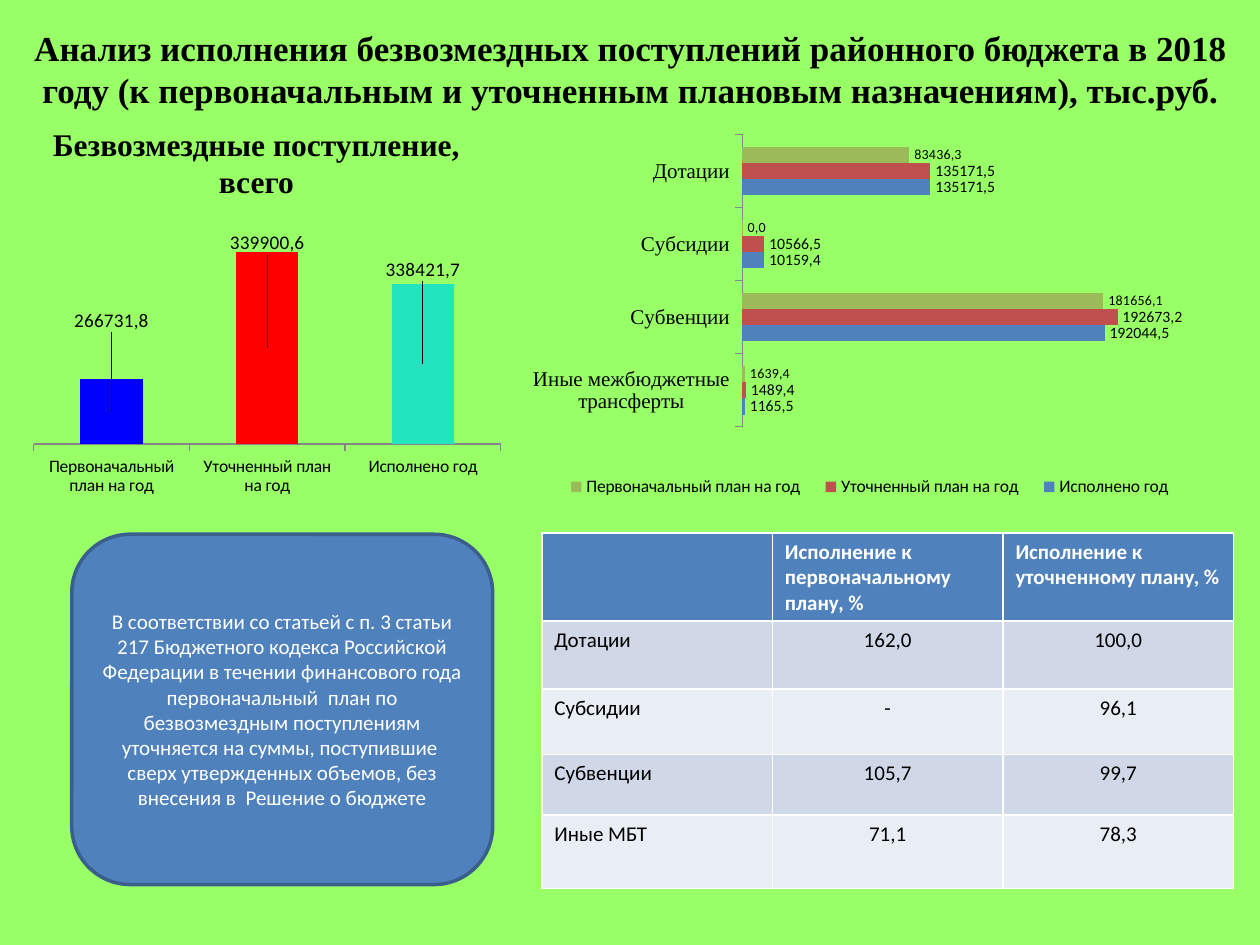
from lxml import etree
from pptx import Presentation
from pptx.chart.data import CategoryChartData
from pptx.dml.color import RGBColor
from pptx.enum.chart import XL_CHART_TYPE, XL_LABEL_POSITION, XL_LEGEND_POSITION, XL_TICK_MARK
from pptx.enum.shapes import MSO_SHAPE
from pptx.enum.text import MSO_ANCHOR, PP_ALIGN
from pptx.oxml.ns import qn
from pptx.util import Inches, Pt

BAR, COLUMN = XL_CHART_TYPE.BAR_CLUSTERED, XL_CHART_TYPE.COLUMN_STACKED
OUTSIDE_END = XL_LABEL_POSITION.OUTSIDE_END
LEGEND_RIGHT = XL_LEGEND_POSITION.RIGHT
TICK_OUT, TICK_NONE = XL_TICK_MARK.OUTSIDE, XL_TICK_MARK.NONE
LEFT, CENTER = PP_ALIGN.LEFT, PP_ALIGN.CENTER
MIDDLE = MSO_ANCHOR.MIDDLE
ROUND_RECT = MSO_SHAPE.ROUNDED_RECTANGLE

SANS, SERIF = "Calibri", "Times New Roman"
COLORS = {
    "background": "99FF66", "black": "000000", "white": "FFFFFF",
    "blue": "4F81BD", "outline": "3A5F8C", "red": "C0504D", "green": "9BBB59",
    "axis": "868686", "initial": "0000FF", "revised": "FF0000", "actual": "22E4BF",
    "band_dark": "D0D8E8", "band_light": "E9EDF4",
}

PLANS = ["Первоначальный план на год", "Уточненный план на год", "Исполнено год"]
TOTALS = [259083.8, 286959.8, 280068.8]
TOTAL_LABELS = ["266731,8", "339900,6", "338421,7"]
TOTAL_LABEL_SHIFTS = [(0, -0.26), (0, -0.3), (0, -0.27)]

KINDS = ["Иные межбюджетные трансферты", "Субвенции", "Субсидии", "Дотации"]
# name, values, labels, colour, label size
KIND_SERIES = [
    (PLANS[2], [1294.1, 176511.9, 10687.2, 91687.6],
     ["1165,5", "192044,5", "10159,4", "135171,5"], "blue", 9),
    (PLANS[1], [1801.7, 182811.8, 10770.7, 91687.6],
     ["1489,4", "192673,2", "10566,5", "135171,5"], "red", 9),
    (PLANS[0], [1388.6, 175943.8, 271.2, 81480.2],
     ["1639,4", "181656,1", "0,0", "83436,3"], "green", 8),
]

EXECUTION = [
    ["", "Исполнение к первоначальному плану, %", "Исполнение к уточненному плану, %"],
    ["Дотации", "162,0", "100,0"],
    ["Субсидии", "-", "96,1"],
    ["Субвенции", "105,7", "99,7"],
    ["Иные МБТ", "71,1", "78,3"],
]
ROW_HEIGHTS = [0.66, 0.54, 0.52, 0.48, 0.58]

TITLE = ("Анализ исполнения безвозмездных поступлений районного бюджета в 2018 году "
         "(к первоначальным и уточненным плановым назначениям), тыс.руб.")
NOTE = ("В соответствии со статьей с п. 3 статьи 217 Бюджетного кодекса Российской "
        "Федерации в течении финансового года первоначальный  план по безвозмездным "
        "поступлениям уточняется на суммы, поступившие  сверх утвержденных объемов, "
        "без внесения в  Решение о бюджете")


def rgb(name):
    return RGBColor.from_string(COLORS[name])


def box(left, top, width, height):
    return [Inches(v) for v in (left, top, width, height)]


def style_font(font, size, color="black", name=SANS, bold=False):
    font.size, font.name, font.bold = Pt(size), name, bold
    font.color.rgb = rgb(color)


def write(frame, text, align=CENTER, **font_format):
    frame.word_wrap = True
    paragraph = frame.paragraphs[0]
    paragraph.alignment = align
    run = paragraph.add_run()
    run.text = text
    style_font(run.font, **font_format)


def add_heading(slide, text, place, size):
    heading = slide.shapes.add_textbox(*box(*place))
    write(heading.text_frame, text, size=size, name=SERIF, bold=True)


def manual_layout(modes, **fractions):
    """Return a c:layout element with the given modes and fractions of the chart."""
    layout = etree.Element(qn("c:layout"))
    manual = etree.SubElement(layout, qn("c:manualLayout"))
    for tag, value in {**modes, **fractions}.items():
        etree.SubElement(manual, qn("c:" + tag)).set("val", str(value))
    return layout


def edge_layout(x, y, w, h, inner=False):
    modes = {"layoutTarget": "inner"} if inner else {}
    modes.update(xMode="edge", yMode="edge")
    return manual_layout(modes, x=x, y=y, w=w, h=h)


def add_chart(slide, kind, place, categories, series, plot_place, scale, axis_font):
    """Add a chart with a hidden value axis; series is a list of (name, values)."""
    data = CategoryChartData(number_format="0.0")
    data.categories = categories
    for name, values in series:
        data.add_series(name, values)
    chart = slide.shapes.add_chart(kind, *box(*place), data).chart
    chart.has_title = False
    chart.has_legend = False
    style_font(chart.font, 18)

    chart.value_axis.visible = False
    chart.value_axis.has_major_gridlines = False
    chart.value_axis.minimum_scale, chart.value_axis.maximum_scale = scale
    axis = chart.category_axis
    axis.major_tick_mark, axis.minor_tick_mark = TICK_OUT, TICK_NONE
    axis.format.line.color.rgb = rgb("axis")
    style_font(axis.tick_labels.font, **axis_font)

    plot = chart.plots[0]
    plot.gap_width = 150
    plot.vary_by_categories = False
    plot_area = chart._chartSpace.chart.plotArea
    for old in plot_area.findall(qn("c:layout")):
        plot_area.remove(old)
    plot_area.insert(0, edge_layout(*plot_place, inner=True))
    return chart


def label_points(series, labels, size, position=None, shifts=None):
    defaults = series.data_labels
    defaults.show_value = True
    style_font(defaults.font, size)
    for index, text in enumerate(labels):
        label = series.points[index].data_label
        write(label.text_frame, text, size=size)
        if position is not None:
            label.position = position
        if shifts and shifts[index]:
            x, y = shifts[index]
            element = series._element.xpath(f"c:dLbls/c:dLbl[c:idx/@val='{index}']")[0]
            element.insert(1, manual_layout({}, x=x, y=y))


def add_totals_chart(slide):
    chart = add_chart(slide, COLUMN, (0.23, 1.53, 3.75, 2.77), PLANS, [("Series 1", TOTALS)],
                      (0.01, 0.13, 0.99, 0.59), (245000, 290000), {"size": 10})
    chart.plots[0].overlap = 100
    totals = chart.plots[0].series[0]
    totals.format.fill.solid()
    totals.format.fill.fore_color.rgb = rgb("blue")
    for index, color in enumerate(("initial", "revised", "actual")):
        fill = totals.points[index].format.fill
        fill.solid()
        fill.fore_color.rgb = rgb(color)
    label_points(totals, TOTAL_LABELS, 11, shifts=TOTAL_LABEL_SHIFTS)


def add_kinds_chart(slide):
    chart = add_chart(slide, BAR, (3.98, 0.94, 5.62, 3.18), KINDS,
                      [row[:2] for row in KIND_SERIES], (0.34, 0.04, 0.58, 0.73),
                      (0, 200000), {"size": 12, "name": SERIF})
    for series, (_, _, labels, color, size) in zip(chart.plots[0].series, KIND_SERIES):
        series.format.fill.solid()
        series.format.fill.fore_color.rgb = rgb(color)
        label_points(series, labels, size, position=OUTSIDE_END)
    chart.has_legend = True
    legend = chart.legend
    legend.position = LEGEND_RIGHT
    legend.include_in_layout = False
    style_font(legend.font, 10)
    for old in legend._element.findall(qn("c:layout")):
        legend._element.remove(old)
    legend._element.insert(1, edge_layout(0.07, 0.88, 0.9, 0.08))


def add_note(slide):
    note = slide.shapes.add_shape(ROUND_RECT, *box(0.57, 4.24, 3.34, 2.78))
    note.shadow.inherit = False
    note.fill.solid()
    note.fill.fore_color.rgb = rgb("blue")
    note.line.color.rgb = rgb("outline")
    note.line.width = Pt(2)
    note.text_frame.vertical_anchor = MIDDLE
    write(note.text_frame, NOTE, size=12, color="white")


def add_execution_table(slide):
    table = slide.shapes.add_table(len(EXECUTION), 3, *box(4.3, 4.23, 5.49, 2.78)).table
    for r, (row, height) in enumerate(zip(EXECUTION, ROW_HEIGHTS)):
        table.rows[r].height = Inches(height)
        header = r == 0
        fill = "blue" if header else "band_dark" if r % 2 else "band_light"
        for c, text in enumerate(row):
            cell = table.cell(r, c)
            cell.fill.solid()
            cell.fill.fore_color.rgb = rgb(fill)
            write(cell.text_frame, text, align=LEFT if header or c == 0 else CENTER,
                  size=12, color="white" if header else "black", bold=header)


def main():
    deck = Presentation()
    deck.slide_width, deck.slide_height = Inches(10), Inches(7.5)
    slide = deck.slides.add_slide(deck.slide_layouts[6])
    slide.background.fill.solid()
    slide.background.fill.fore_color.rgb = rgb("background")
    add_kinds_chart(slide)
    add_heading(slide, TITLE, (0.16, 0.16, 9.69, 0.77), 20)
    add_heading(slide, "Безвозмездные поступление, всего", (0.16, 0.94, 3.75, 0.71), 18)
    add_totals_chart(slide)
    add_note(slide)
    add_execution_table(slide)
    deck.save("out.pptx")


if __name__ == "__main__":
    main()
